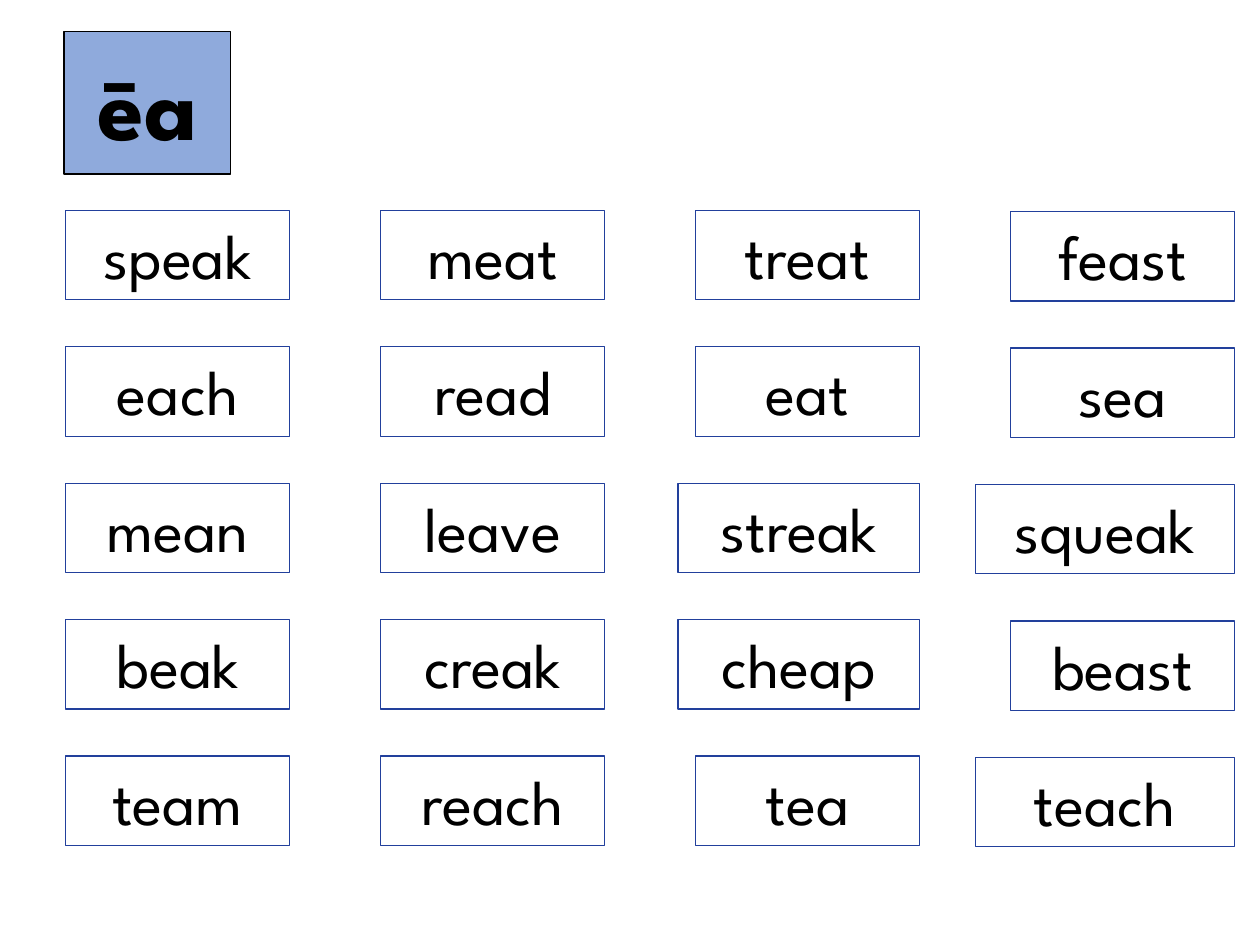
from pptx import Presentation
from pptx.dml.color import RGBColor
from pptx.enum.shapes import MSO_SHAPE
from pptx.enum.text import MSO_ANCHOR, MSO_AUTO_SIZE, PP_ALIGN
from pptx.util import Inches, Pt

RECT = MSO_SHAPE.RECTANGLE
TOP, MIDDLE = MSO_ANCHOR.TOP, MSO_ANCHOR.MIDDLE
GROW, FIXED = MSO_AUTO_SIZE.SHAPE_TO_FIT_TEXT, MSO_AUTO_SIZE.NONE
CENTER = PP_ALIGN.CENTER

BLACK = RGBColor(0x00, 0x00, 0x00)
OUTLINE = RGBColor(0x22, 0x40, 0x9C)
SOUND_FILL = RGBColor(0x8F, 0xAA, 0xDC)

FONT = "League Spartan"
GRID_RIGHT, GRID_TOP = 2.3, 1.67
COL_STEP, ROW_STEP = 2.5, (6 - 1.67) / 4
CARD_WIDTH, CARD_HEIGHT = 1.78, 0.71
LAST_COLUMN_DROP = 0.01

WORD_COLUMNS = [
    ["speak", "each", "mean", "beak", "team"],
    ["meat", "read", "leave", "creak", "reach"],
    ["treat", "eat", "streak", "cheap", "tea"],
    ["feast", "sea", "squeak", "beast", "teach"],
]
WIDE_CARDS = {"streak": 1.92, "cheap": 1.92, "squeak": 2.06, "teach": 2.06}


class WordSlide:
    def __init__(self, slide):
        self.slide = slide

    def box(self, left, top, width, height, line_color, line_width):
        sp = self.slide.shapes.add_shape(
            RECT, Inches(left), Inches(top), Inches(width), Inches(height))
        sp.shadow.inherit = False
        sp.fill.background()
        sp.line.color.rgb = line_color
        sp.line.width = Pt(line_width)
        return sp

    def label(self, sp, text, size, anchor, auto_size, bold=False):
        tf = sp.text_frame
        tf.word_wrap = True
        tf.auto_size = auto_size
        tf.vertical_anchor = anchor
        p = tf.paragraphs[0]
        p.alignment = CENTER
        r = p.add_run()
        r.text = text
        r.font.name = FONT
        r.font.size = Pt(size)
        r.font.bold = bold
        r.font.color.rgb = BLACK

    def word_card(self, word, col, row):
        width = WIDE_CARDS.get(word, CARD_WIDTH)
        left = GRID_RIGHT + col * COL_STEP - width
        top = GRID_TOP + row * ROW_STEP
        if col == len(WORD_COLUMNS) - 1:
            top += LAST_COLUMN_DROP
        sp = self.box(left, top, width, CARD_HEIGHT, OUTLINE, 0.75)
        self.label(sp, word, 36, TOP, GROW)

    def sound_card(self, sound):
        sp = self.box(0.51, 0.25, 1.32, 1.13, BLACK, 1)
        sp.fill.solid()
        sp.fill.fore_color.rgb = SOUND_FILL
        self.label(sp, sound, 54, MIDDLE, FIXED, bold=True)


def main():
    prs = Presentation()
    prs.slide_width, prs.slide_height = Inches(10), Inches(7.5)
    s = WordSlide(prs.slides.add_slide(prs.slide_layouts[6]))
    for col, words in enumerate(WORD_COLUMNS):
        for row, word in enumerate(words):
            s.word_card(word, col, row)
    s.sound_card("ēa")
    prs.save("out.pptx")


if __name__ == "__main__":
    main()
